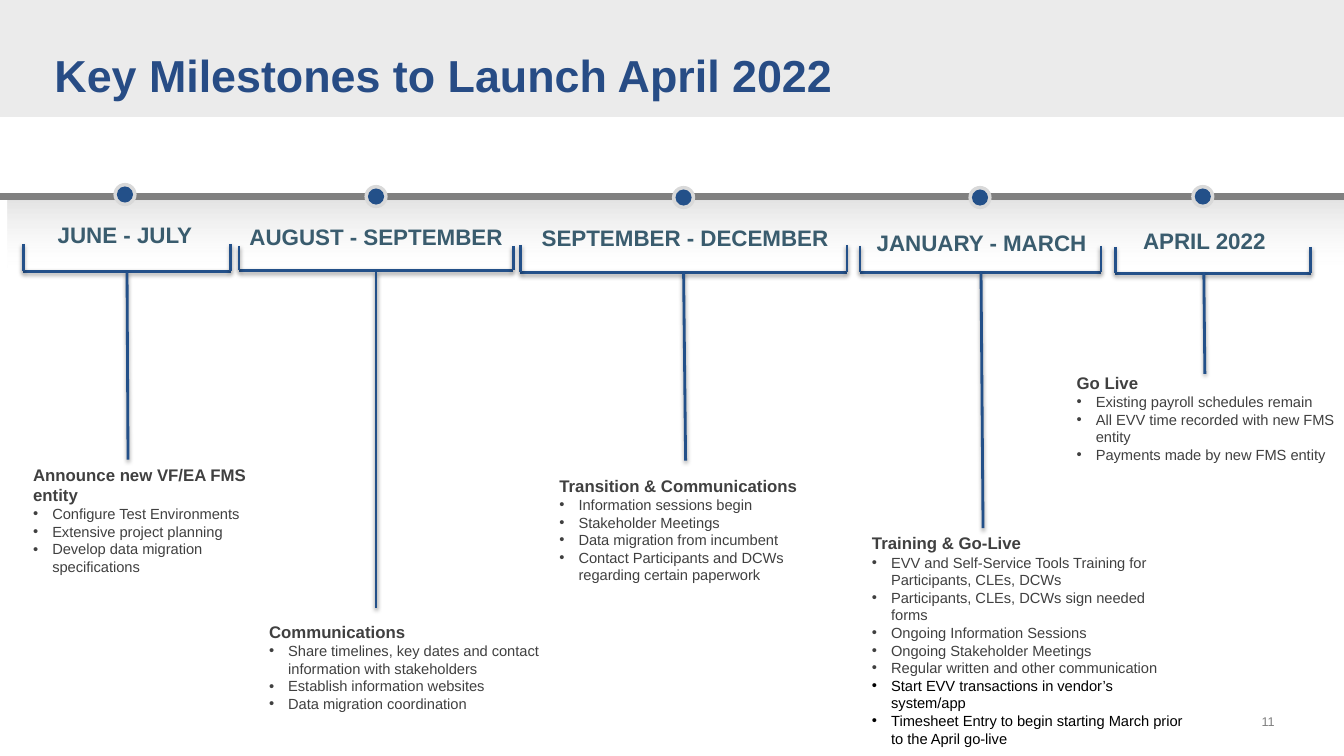
from lxml import etree
from pptx import Presentation
from pptx.dml.color import RGBColor
from pptx.enum import shapes, text
from pptx.oxml import parse_xml
from pptx.oxml.ns import nsdecls, qn
from pptx.util import Inches, Pt

NAVY = RGBColor(0x23, 0x50, 0x89)
TITLE = RGBColor(0x27, 0x4C, 0x85)
SLATE = RGBColor(0x3A, 0x5C, 0x6E)
DARK = RGBColor(0x40, 0x40, 0x40)
BLACK = RGBColor(0, 0, 0)
GRAY = RGBColor(0x80, 0x80, 0x80)
PAGE = RGBColor(0x7F, 0x7F, 0x7F)
RING = RGBColor(0xD9, 0xD9, 0xD9)
BAND = RGBColor(0xEB, 0xEB, 0xEB)

LEFT, MID, RIGHT = text.PP_ALIGN.LEFT, text.PP_ALIGN.CENTER, text.PP_ALIGN.RIGHT
RECT, OVAL = shapes.MSO_SHAPE.RECTANGLE, shapes.MSO_SHAPE.OVAL

STAGES = [
    dict(label="JUNE - JULY", box=(0.17, 2.14, 2.14), dot=(1.24, 1.93),
         hook=(0.23, 2.29, 2.42, 2.69), stem=(1.26, 1.27, 4.56),
         note=(0.23, 4.56, 2.61, 1.21), head="Announce new VF/EA FMS entity",
         items=["Configure Test Environments", "Extensive project planning",
                "Develop data migration specifications"]),
    dict(label="AUGUST - SEPTEMBER", box=(2.36, 2.16, 2.74), dot=(3.73, 1.95),
         hook=(2.37, 5.09, 2.44, 2.68), stem=(3.73, 3.73, 6.03),
         note=(2.57, 6.12, 3.02, 1.01), head="Communications",
         items=["Share timelines, key dates and contact information with stakeholders",
                "Establish information websites", "Data migration coordination"]),
    dict(label="SEPTEMBER - DECEMBER", box=(4.8, 2.17, 3.99), dot=(6.78, 1.96),
         hook=(5.16, 8.4, 2.43, 2.7), stem=(6.78, 6.8, 4.57),
         note=(5.45, 4.67, 2.7, 1.36), head="Transition & Communications",
         items=["Information sessions begin", "Stakeholder Meetings",
                "Data migration from incumbent",
                "Contact Participants and DCWs regarding certain paperwork"]),
    dict(label="JANUARY - MARCH", box=(8.16, 2.22, 3.15), dot=(9.72, 1.96),
         hook=(8.53, 10.92, 2.44, 2.7), stem=(9.73, 9.75, 5.24),
         note=(8.55, 5.24, 3.31, 2.25), head="Training & Go-Live",
         items=["EVV and Self-Service Tools Training for Participants, CLEs, DCWs",
                "Participants, CLEs, DCWs sign needed forms",
                "Ongoing Information Sessions", "Ongoing Stakeholder Meetings",
                "Regular written and other communication"],
         late=["Start EVV transactions in vendor’s system/app",
               "Timesheet Entry to begin starting March prior to the April go-live"]),
    dict(label="APRIL 2022", box=(10.95, 2.2, 1.99), dot=(11.93, 1.95),
         hook=(11.06, 13, 2.45, 2.71), stem=(11.94, 11.95, 3.71),
         note=(10.58, 3.65, 3.01, 1.19), head="Go Live",
         items=["Existing payroll schedules remain",
                "All EVV time recorded with new FMS entity",
                "Payments made by new FMS entity"]),
]


def write(para, words, size=10.5, color=DARK, bold=False, align=LEFT, bullet=False):
    if bullet:
        props = para._p.get_or_add_pPr()
        props.set("marL", str(Inches(0.19)))
        props.set("indent", str(-Inches(0.19)))
        font = etree.SubElement(props, qn("a:buFont"))
        font.set("typeface", "Arial")
        etree.SubElement(props, qn("a:buChar")).set("char", "•")
    para.alignment = align
    run = para.add_run()
    run.text = words
    run.font.name = "Arial"
    run.font.size = Pt(size)
    run.font.bold = bold
    run.font.color.rgb = color


def add_box(slide, left, top, width, height, pad=0.1):
    frame = slide.shapes.add_textbox(*map(Inches, (left, top, width, height))).text_frame
    frame.word_wrap = True
    frame.margin_left = frame.margin_right = Inches(pad)
    return frame


def add_form(slide, kind, left, top, width, height, color):
    form = slide.shapes.add_shape(kind, *map(Inches, (left, top, width, height)))
    form.shadow.inherit = False
    form.line.fill.background()
    form.fill.solid()
    form.fill.fore_color.rgb = color
    return form


def add_line(slide, x1, y1, x2, y2, color=NAVY, width=2, shade=True):
    line = slide.shapes.add_connector(
        shapes.MSO_CONNECTOR.STRAIGHT, *map(Inches, (x1, y1, x2, y2)))
    line.line.color.rgb = color
    line.line.width = Pt(width)
    effect = etree.SubElement(line._element.spPr, qn("a:effectLst"))
    if shade:
        effect.append(parse_xml(
            f'<a:outerShdw {nsdecls("a")} blurRad="{Pt(3.1)}" dist="{Pt(1.6)}" '
            'dir="5400000" rotWithShape="0"><a:srgbClr val="000000">'
            '<a:alpha val="38000"/></a:srgbClr></a:outerShdw>'))


def add_fade(slide):
    fade = add_form(slide, RECT, 0.08, 1.98, 13.34, 1.03, BAND)
    solid = fade._element.spPr.find(qn("a:solidFill"))
    stops = "".join(
        f'<a:gs pos="{pos}"><a:srgbClr val="{color}"><a:alpha val="{alpha}"/></a:srgbClr></a:gs>'
        for pos, color, alpha in [(0, "474747", 15000), (71000, "FFFFFF", 0)])
    solid.getparent().replace(solid, parse_xml(
        f'<a:gradFill {nsdecls("a")} rotWithShape="1"><a:gsLst>{stops}</a:gsLst>'
        '<a:lin ang="5400000" scaled="0"/></a:gradFill>'))


def add_title(slide, words):
    title = slide.shapes.title
    title.left, title.top, title.width, title.height = map(Inches, (0.54, 0.34, 11.16, 0.8))
    frame = title.text_frame
    frame.margin_left = frame.margin_right = frame.margin_top = frame.margin_bottom = 0
    frame.vertical_anchor = text.MSO_ANCHOR.MIDDLE
    write(frame.paragraphs[0], words, size=32, color=TITLE, bold=True)
    band = add_form(slide, RECT, 0, 0, 13.33, 1.16, BAND)
    title._element.addprevious(band._element)


def add_dot(slide, x, y):
    for size, color in [(0.23, RING), (0.16, NAVY)]:
        add_form(slide, OVAL, x - size / 2, y - size / 2, size, size, color)


def add_hook(slide, left, right, top, base):
    add_line(slide, left, base, right, base)
    for x in (left, right):
        add_line(slide, x, top, x, base)


def add_note(slide, place, head, items, late=()):
    frame = add_box(slide, *place)
    write(frame.paragraphs[0], head, size=12, bold=True)
    for color, group in [(DARK, items), (BLACK, late)]:
        for item in group:
            write(frame.add_paragraph(), item, color=color, bullet=True)


def add_stage(slide, stage):
    add_dot(slide, *stage["dot"])
    label = add_box(slide, *stage["box"], 0.37, pad=0)
    write(label.paragraphs[0], stage["label"], size=16, color=SLATE, bold=True, align=MID)
    add_note(slide, stage["note"], stage["head"], stage["items"], stage.get("late", ()))
    add_hook(slide, *stage["hook"])
    start, end, foot = stage["stem"]
    add_line(slide, start, 2.7, end, foot)


def main():
    deck = Presentation()
    deck.slide_width, deck.slide_height = Inches(13.33), Inches(7.5)
    slide = deck.slides.add_slide(deck.slide_layouts[5])
    add_title(slide, "Key Milestones to Launch April 2022")
    add_fade(slide)
    add_line(slide, 0, 1.95, 13.33, 1.95, color=GRAY, width=5.5, shade=False)
    for stage in STAGES:
        add_stage(slide, stage)
    number = add_box(slide, 12.23, 6.96, 0.51, 0.4)
    number.vertical_anchor = text.MSO_ANCHOR.MIDDLE
    write(number.paragraphs[0], "11", size=9, color=PAGE, align=RIGHT)
    deck.save("out.pptx")


if __name__ == "__main__":
    main()
